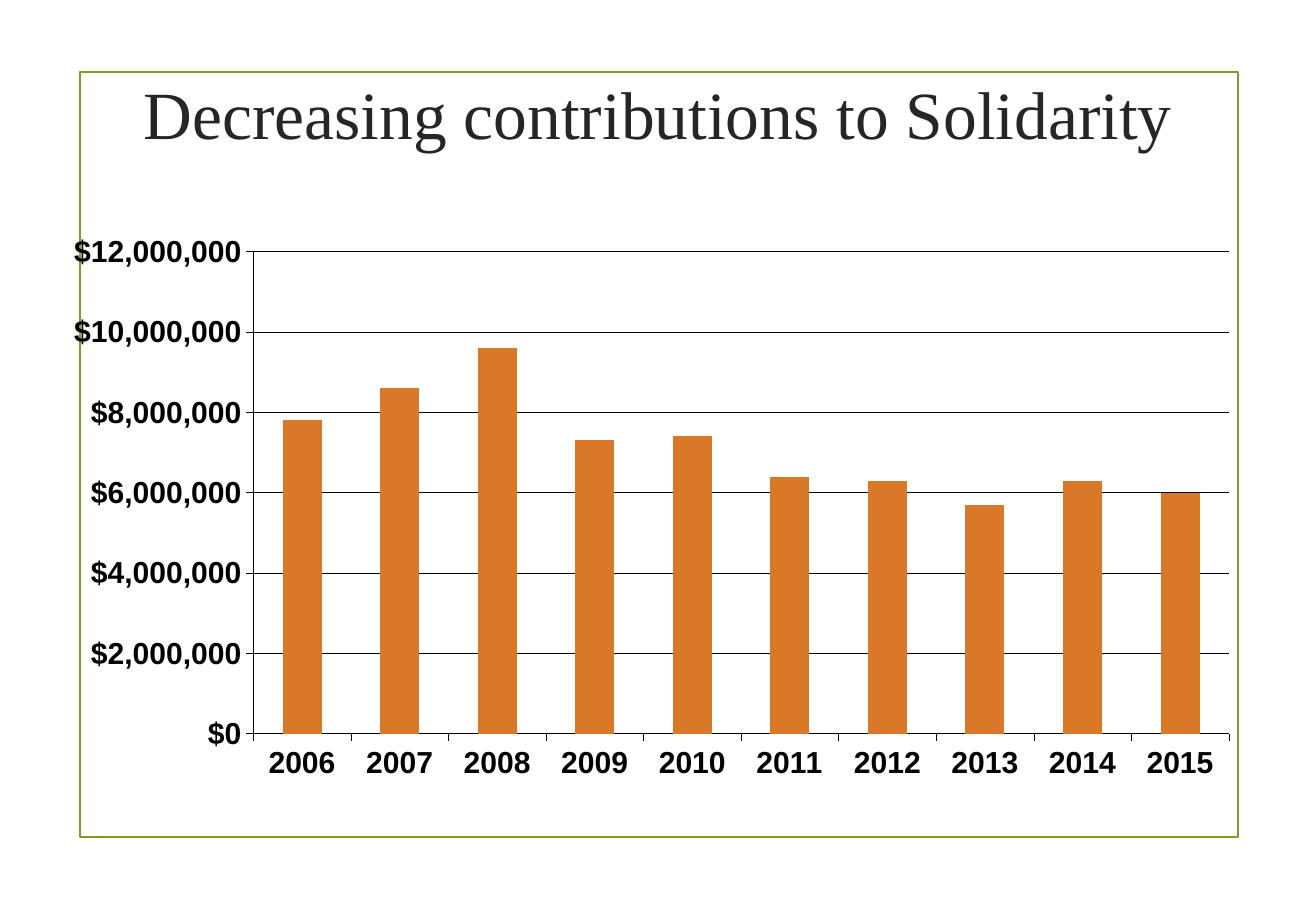
from typing import NamedTuple

from lxml import etree
from pptx import Presentation
from pptx.chart.data import CategoryChartData
from pptx.dml.color import RGBColor
from pptx.enum.chart import XL_CHART_TYPE, XL_TICK_LABEL_POSITION, XL_TICK_MARK
from pptx.enum.shapes import MSO_SHAPE
from pptx.enum.text import MSO_ANCHOR, PP_ALIGN
from pptx.oxml.ns import qn
from pptx.util import Cm, Pt

CLUSTERED = XL_CHART_TYPE.COLUMN_CLUSTERED
LABELS_LOW = XL_TICK_LABEL_POSITION.LOW
TICK_OUTSIDE = XL_TICK_MARK.OUTSIDE
RECTANGLE = MSO_SHAPE.RECTANGLE
MIDDLE = MSO_ANCHOR.MIDDLE
CENTER = PP_ALIGN.CENTER

COLORS = {"frame": "83992A", "title": "262626", "axis": "000000", "bar": "D97828"}
PLOT_AREA = {"x": 0.145, "y": 0.054, "w": 0.843, "h": 0.82}


class Contribution(NamedTuple):
    year: str
    dollars: int


CONTRIBUTIONS = [
    Contribution("2006", 7_800_000),
    Contribution("2007", 8_600_000),
    Contribution("2008", 9_600_000),
    Contribution("2009", 7_300_000),
    Contribution("2010", 7_400_000),
    Contribution("2011", 6_400_000),
    Contribution("2012", 6_300_000),
    Contribution("2013", 5_700_000),
    Contribution("2014", 6_300_000),
    Contribution("2015", 6_000_000),
]


def color(name: str) -> RGBColor:
    return RGBColor.from_string(COLORS[name])


def style_font(font, name: str, size: int, color_name: str, bold: bool) -> None:
    font.name = name
    font.size = Pt(size)
    font.bold = bold
    font.color.rgb = color(color_name)


def style_line(line, color_name: str, width: float) -> None:
    line.color.rgb = color(color_name)
    line.width = Pt(width)


def add_frame(slide) -> None:
    frame = slide.shapes.add_shape(RECTANGLE, Cm(1.68), Cm(1.5), Cm(24.2), Cm(16))
    frame.shadow.inherit = False
    frame.fill.background()
    style_line(frame.line, "frame", 1.25)
    slide.shapes.title.element.addprevious(frame.element)


def set_title(slide, wording: str) -> None:
    title = slide.shapes.title
    title.left, title.top = Cm(1.37), Cm(0.76)
    title.width, title.height = Cm(24.77), Cm(3.18)
    title.text_frame.text = wording
    title.text_frame.vertical_anchor = MIDDLE
    heading = title.text_frame.paragraphs[0]
    heading.alignment = CENTER
    style_font(heading.runs[0].font, "Times New Roman", 40, "title", False)


def style_axis(axis) -> None:
    axis.major_tick_mark = TICK_OUTSIDE
    style_font(axis.tick_labels.font, "Arial", 18, "axis", True)
    style_line(axis.format.line, "axis", 0.25)


def fix_plot_area(chart) -> None:
    plot_area = chart.plots[0]._element.getparent()
    layout = plot_area.find(qn("c:layout"))
    if layout is None:
        layout = etree.Element(qn("c:layout"))
        plot_area.insert(0, layout)
    manual = etree.SubElement(layout, qn("c:manualLayout"))
    settings = {"layoutTarget": "inner", "xMode": "edge", "yMode": "edge", **PLOT_AREA}
    for tag, value in settings.items():
        etree.SubElement(manual, qn(f"c:{tag}")).set("val", str(value))


def add_contribution_chart(slide, contributions: list[Contribution]) -> None:
    yearly = CategoryChartData()
    yearly.categories = [item.year for item in contributions]
    yearly.add_series("Series 1", [item.dollars for item in contributions])
    chart = slide.shapes.add_chart(
        CLUSTERED, Cm(1.55), Cm(4.6), Cm(24.43), Cm(12.29), yearly
    ).chart
    chart.has_legend = False
    chart.has_title = False
    style_font(chart.font, "Arial", 18, "axis", True)

    columns = chart.plots[0]
    columns.gap_width = 150
    columns.vary_by_categories = False
    fill = columns.series[0].format.fill
    fill.solid()
    fill.fore_color.rgb = color("bar")

    years, dollars = chart.category_axis, chart.value_axis
    for axis in (years, dollars):
        style_axis(axis)
    years.tick_label_position = LABELS_LOW
    dollars.minimum_scale = 0
    dollars.maximum_scale = 12_000_000
    dollars.major_unit = 2_000_000
    dollars.tick_labels.number_format = "[$$-409]#,##0"
    dollars.tick_labels.number_format_is_linked = False
    style_line(dollars.major_gridlines.format.line, "axis", 0.25)
    fix_plot_area(chart)


def main() -> None:
    presentation = Presentation()
    presentation.slide_width = Cm(27.51)
    presentation.slide_height = Cm(19.05)
    slide = presentation.slides.add_slide(presentation.slide_layouts[5])
    add_frame(slide)
    set_title(slide, "Decreasing contributions to Solidarity")
    add_contribution_chart(slide, CONTRIBUTIONS)
    presentation.save("out.pptx")


if __name__ == "__main__":
    main()
